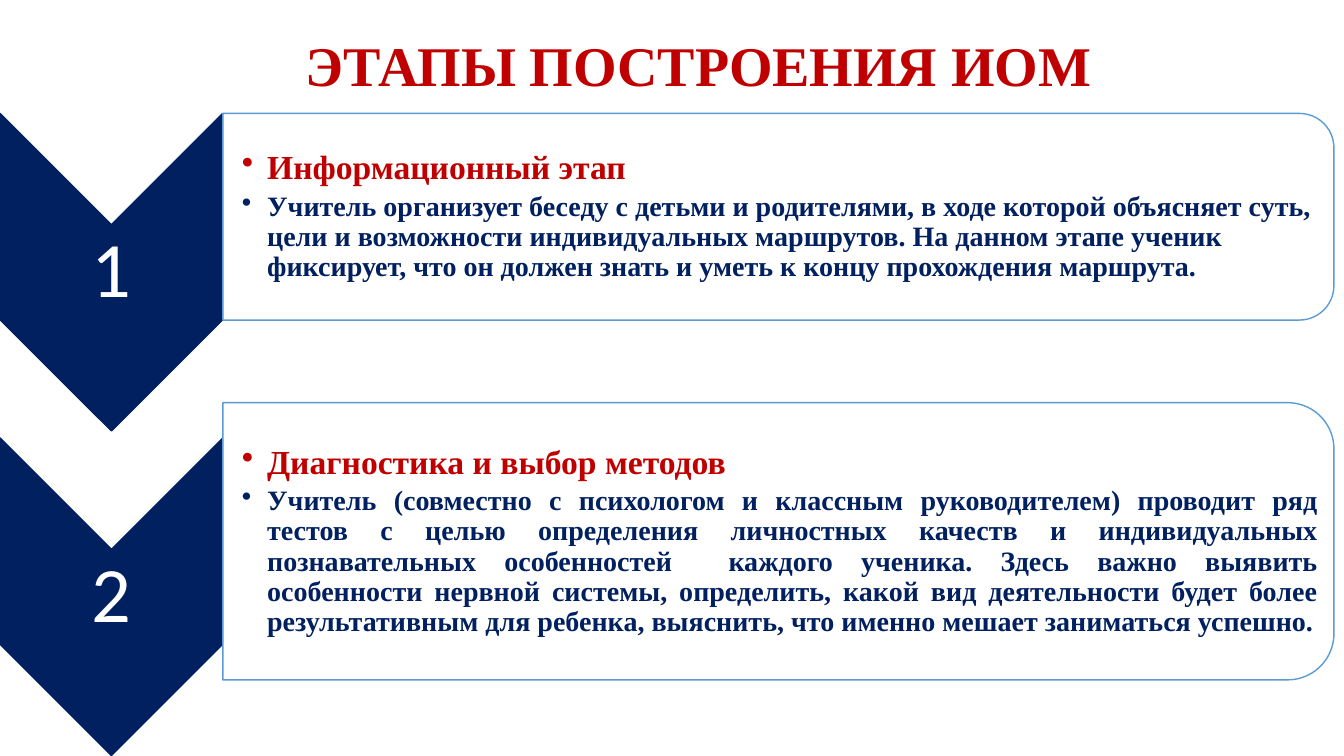
import pptx
import pptx.util
import pptx.dml.color
import pptx.enum.shapes
import pptx.enum.text
import pptx.oxml
import pptx.oxml.ns
from lxml import etree

Inches = pptx.util.Inches
Pt = pptx.util.Pt
SHAPE = pptx.enum.shapes.MSO_SHAPE
ALIGN = pptx.enum.text.PP_ALIGN

STAGES = [
    ("Информационный этап",
     "Учитель организует беседу с детьми и родителями, в ходе которой объясняет суть, "
     "цели и возможности индивидуальных маршрутов. На данном этапе ученик фиксирует, "
     "что он должен знать и уметь к концу прохождения маршрута.",
     2.05, ALIGN.LEFT),
    ("Диагностика и выбор методов",
     "Учитель (совместно с психологом и классным руководителем) проводит ряд тестов "
     "с целью определения личностных качеств и индивидуальных познавательных "
     "особенностей  каждого ученика. Здесь важно выявить особенности нервной системы, "
     "определить, какой вид деятельности будет более результативным для ребенка, "
     "выяснить, что именно мешает заниматься успешно.",
     2.75, ALIGN.JUSTIFY),
]


def rgb(value):
    return pptx.dml.color.RGBColor.from_string(value)


class StageSlide:
    NAVY, RED, BLUE, WHITE = "002060", "C00000", "5B9BD5", "FFFFFF"
    SERIF, SANS = "Times New Roman", "Calibri"

    def __init__(self, slide):
        self.shapes = slide.shapes

    def turned_shape(self, preset, center, width, height, fill, line, opacity=100):
        """Add a shape turned 90 degrees; width and height are as seen after the turn."""
        x, y = center
        shape = self.shapes.add_shape(preset, Inches(x - height / 2), Inches(y - width / 2),
                                      Inches(height), Inches(width))
        shape.rotation = 90
        shape.shadow.inherit = False
        shape.fill.solid()
        shape.fill.fore_color.rgb = rgb(fill)
        shape.line.color.rgb = rgb(line)
        shape.line.width = Pt(1)
        if opacity < 100:
            color = shape.fill._xPr.find(".//" + pptx.oxml.ns.qn("a:srgbClr"))
            etree.SubElement(color, pptx.oxml.ns.qn("a:alpha"), val=str(opacity * 1000))

    def text_frame(self, left, top, width, height, margins):
        box = self.shapes.add_textbox(Inches(left), Inches(top), Inches(width), Inches(height))
        frame = box.text_frame
        frame.word_wrap = True
        frame.vertical_anchor = pptx.enum.text.MSO_ANCHOR.MIDDLE
        (frame.margin_left, frame.margin_top,
         frame.margin_right, frame.margin_bottom) = map(Inches, margins)
        return frame

    def fill_paragraph(self, paragraph, text, size, font, color, bold=True, align=ALIGN.CENTER):
        paragraph.text = text
        paragraph.alignment = align
        paragraph.line_spacing = 0.9
        paragraph.font.size = Pt(size)
        paragraph.font.name = font
        paragraph.font.bold = bold
        paragraph.font.color.rgb = rgb(color)

    def bullet(self, paragraph, text, size, color, align):
        self.fill_paragraph(paragraph, text, size, self.SERIF, color, align=align)
        paragraph.space_after = Pt(size * 0.15)
        properties = paragraph._p.get_or_add_pPr()
        properties.set("marL", str(Inches(0.25)))
        properties.set("indent", str(-Inches(0.25)))
        etree.SubElement(properties, pptx.oxml.ns.qn("a:buChar"), char="•")
        # The schema wants the bullet ahead of the default run properties
        properties.append(properties.find(pptx.oxml.ns.qn("a:defRPr")))

    def title(self, text):
        frame = self.text_frame(0.83, 0.17, 12.2, 1.02, (0.1, 0.05, 0.1, 0.05))
        self.fill_paragraph(frame.paragraphs[0], text, 40, self.SERIF, self.RED)

    def arrow(self, number, middle):
        width = 2.21
        self.turned_shape(SHAPE.CHEVRON, (width / 2, middle), width, 3.15, self.NAVY, self.NAVY)
        frame = self.text_frame(0, middle - 0.475, width, 0.95, (0.04,) * 4)
        self.fill_paragraph(frame.paragraphs[0], str(number), 56, self.SANS, self.WHITE,
                            bold=False)

    def panel(self, heading, body, middle, height, body_align):
        left, width = 2.21, 11.02
        self.turned_shape(SHAPE.ROUND_2_SAME_RECTANGLE, (left + width / 2, middle),
                          width, height, self.WHITE, self.BLUE, opacity=90)
        corner = 0.05 * height
        frame = self.text_frame(left, middle - height / 2 + corner, width - corner,
                                height - 2 * corner, (0.19, 0.02, 0.02, 0.02))
        self.bullet(frame.paragraphs[0], heading, 24, self.RED, ALIGN.LEFT)
        self.bullet(frame.add_paragraph(), body, 20, self.NAVY, body_align)


def main():
    deck = pptx.Presentation()
    deck.slide_width, deck.slide_height = Inches(13.33), Inches(7.5)
    page = StageSlide(deck.slides.add_slide(deck.slide_layouts[6]))
    page.title("ЭТАПЫ ПОСТРОЕНИЯ ИОМ")
    stage_step = 3.22
    for index, (heading, body, height, body_align) in enumerate(STAGES):
        offset = index * stage_step
        page.arrow(index + 1, 2.7 + offset)
        page.panel(heading, body, 2.15 + offset, height, body_align)
    deck.save("out.pptx")


if __name__ == "__main__":
    main()
